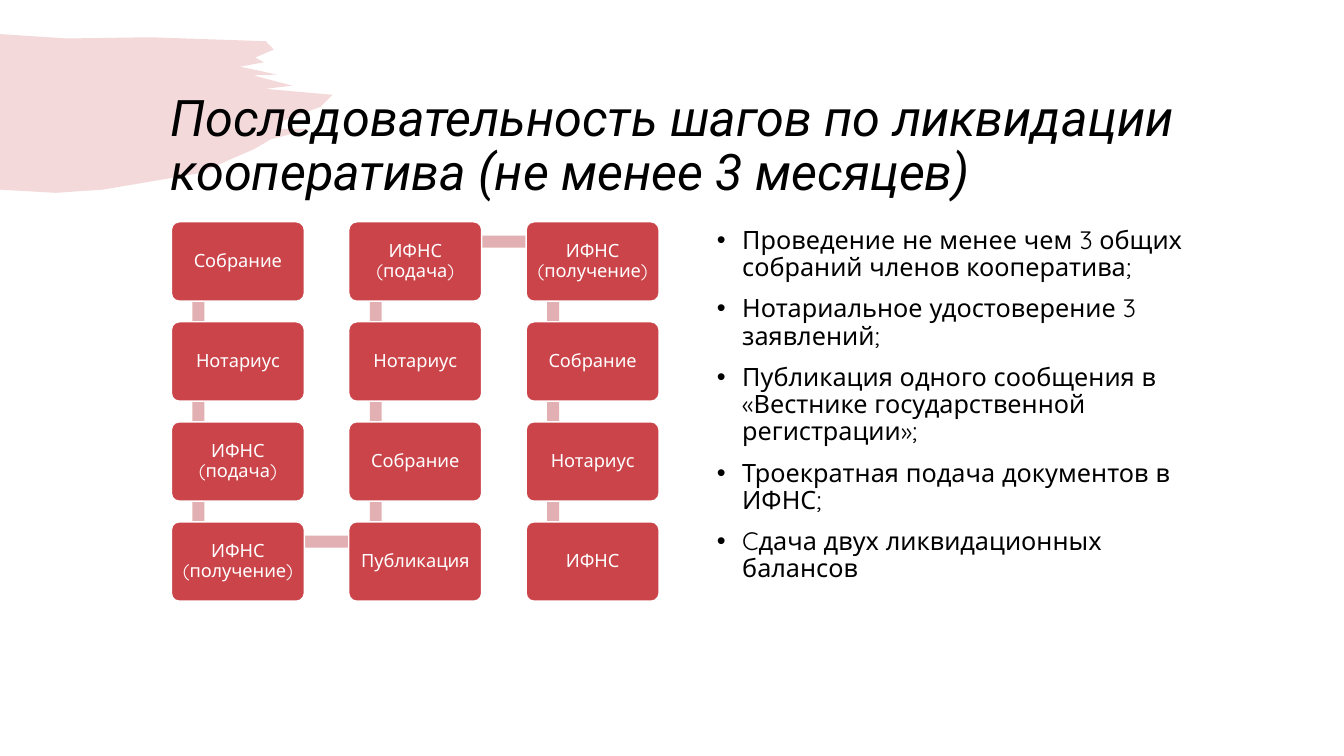
"""Slide with the step-by-step liquidation of a cooperative."""
from lxml.etree import SubElement
from pptx import Presentation
from pptx.dml.color import RGBColor
from pptx.enum.shapes import MSO_SHAPE
from pptx.enum.text import MSO_ANCHOR, MSO_AUTO_SIZE, PP_ALIGN
from pptx.oxml.ns import qn
from pptx.util import Cm, Pt

RED, PINK, WHITE, BLACK = "CB444A", "E2B0B2", "FFFFFF", "000000"
TITLE = "Последовательность шагов по ликвидации кооператива (не менее 3 месяцев)"
COLUMNS = [
    ["Собрание", "Нотариус", "ИФНС (подача)", "ИФНС (получение)"],
    ["ИФНС (подача)", "Нотариус", "Собрание", "Публикация"],
    ["ИФНС (получение)", "Собрание", "Нотариус", "ИФНС"],
]
POINTS = [
    "Проведение не менее чем 3 общих собраний членов кооператива;",
    "Нотариальное удостоверение 3 заявлений;",
    "Публикация одного сообщения в «Вестнике государственной регистрации»;",
    "Троекратная подача документов в ИФНС;",
    "Cдача двух ликвидационных балансов",
]
GRID_LEFT, GRID_TOP, COLUMN_STEP, ROW_STEP = 4.32, 5.59, 4.47, 2.52
BOX_WIDTH, BOX_HEIGHT, LINK_THICKNESS = 3.35, 2, 0.3
BRUSH_TOP = 0.86
BRUSH_EDGE = [
    (1.7, 0.97), (3.8, 0.94), (6.7, 1.04), (6.9, 1.25), (6.43, 1.45), (6.65, 1.57),
    (6.05, 1.68), (6.98, 1.88), (6.38, 1.9), (7.37, 2.16), (6.68, 2.24), (8.38, 2.39),
    (8.08, 2.69), (7.11, 3.05), (6.96, 3.25), (7.82, 3.25), (6.83, 3.51), (6.4, 3.76),
    (5, 4.37), (2.59, 4.78), (1.4, 4.86), (0, 4.78),
]


def color(value):
    """Turn a hex string into a colour."""
    return RGBColor.from_string(value)


def apply(target, formats):
    """Set each attribute named in a dict of format values."""
    for name, value in formats.items():
        setattr(target, name, value)


def place(shape, left, top, width, height):
    """Move and size a shape in centimetres."""
    apply(shape, {"left": Cm(left), "top": Cm(top), "width": Cm(width), "height": Cm(height)})


def paint(shape, fill):
    """Give a shape a flat fill with neither shadow nor outline."""
    shape.shadow.inherit = False
    shape.fill.solid()
    shape.fill.fore_color.rgb = color(fill)
    shape.line.fill.background()


def write(para, text, text_color, font, layout):
    """Fill a paragraph with one formatted span."""
    apply(para, {"line_spacing": 0.9, **layout})
    span = para.add_run()
    span.text = text
    apply(span.font, font)
    span.font.color.rgb = color(text_color)


def add_brush(page):
    """Draw the translucent brush stroke behind everything else."""
    builder = page.shapes.build_freeform(0, Cm(BRUSH_TOP), scale=1.0)
    builder.add_line_segments([(Cm(x), Cm(y)) for x, y in BRUSH_EDGE], close=True)
    brush = builder.convert_to_shape()
    paint(brush, RED)
    tint = next(brush.element.iter(qn("a:srgbClr")))
    SubElement(tint, qn("a:alpha"), val="20000")
    page.shapes.element.insert(2, brush.element)


def add_title(page):
    """Fill the title placeholder."""
    title = page.shapes.title
    place(title, 4.04, 2.24, 26.7, 2.95)
    apply(title.text_frame, {"vertical_anchor": MSO_ANCHOR.MIDDLE, "word_wrap": True,
                             "auto_size": MSO_AUTO_SIZE.NONE})
    write(title.text_frame.paragraphs[0], TITLE, BLACK,
          {"name": "Roboto", "size": Pt(36), "italic": True}, {"alignment": PP_ALIGN.LEFT})


def add_points(page):
    """Fill the body placeholder with the bulleted list."""
    body = page.placeholders[1]
    place(body, 17.81, 5.61, 12.9, 9.55)
    frame = body.text_frame
    apply(frame, {"word_wrap": True, "auto_size": MSO_AUTO_SIZE.NONE})
    for index, point in enumerate(POINTS):
        para = frame.add_paragraph() if index else frame.paragraphs[0]
        write(para, point, BLACK, {"name": "Quicksand", "size": Pt(18)},
              {"space_before": Pt(10), "alignment": PP_ALIGN.LEFT})
        indents = para._p.get_or_add_pPr()
        indents.set("marL", str(Cm(0.64)))
        indents.set("indent", str(-Cm(0.64)))
        SubElement(indents, qn("a:buFont"), typeface="Arial")
        SubElement(indents, qn("a:buChar"), char="•")


def add_link(page, center_x, center_y, length, rotation):
    """Draw a bar that joins two steps."""
    link = page.shapes.add_shape(MSO_SHAPE.RECTANGLE, 0, 0, 0, 0)
    place(link, center_x - length / 2, center_y - LINK_THICKNESS / 2, length, LINK_THICKNESS)
    link.rotation = rotation
    paint(link, PINK)


def add_step(page, left, top, text):
    """Draw one rounded step box."""
    step = page.shapes.add_shape(MSO_SHAPE.ROUNDED_RECTANGLE, 0, 0, 0, 0)
    place(step, left, top, BOX_WIDTH, BOX_HEIGHT)
    step.adjustments[0] = 0.1
    paint(step, RED)
    step.line.color.rgb = color(WHITE)
    step.line.width = Pt(1)
    margins = {f"margin_{side}": Cm(0.2) for side in ("left", "right", "top", "bottom")}
    apply(step.text_frame, {"word_wrap": True, "vertical_anchor": MSO_ANCHOR.MIDDLE, **margins})
    write(step.text_frame.paragraphs[0], text, WHITE,
          {"name": "Quicksand", "size": Pt(13)}, {"alignment": PP_ALIGN.CENTER})


def add_steps(page):
    """Lay the steps out as a snake of columns, with bars behind the boxes."""
    lefts = [GRID_LEFT + COLUMN_STEP * index for index in range(len(COLUMNS))]
    tops = [GRID_TOP + ROW_STEP * index for index in range(len(COLUMNS[0]))]
    for index, left in enumerate(lefts):
        for top in tops[:-1]:
            add_link(page, left + 0.68, top + 1.75, 2.49, 270 if index % 2 else 90)
    for left, top in zip(lefts, (tops[-1], tops[0])):
        add_link(page, left + 2.93, top + 0.5, 4.45, 0)
    for left, column in zip(lefts, COLUMNS):
        for top, text in zip(tops, column):
            add_step(page, left, top, text)


def main():
    """Build and save the slide."""
    deck = Presentation()
    apply(deck, {"slide_width": Cm(33.87), "slide_height": Cm(19.05)})
    page = deck.slides.add_slide(deck.slide_layouts[1])
    add_brush(page)
    add_title(page)
    add_steps(page)
    add_points(page)
    deck.save("out.pptx")


if __name__ == "__main__":
    main()
